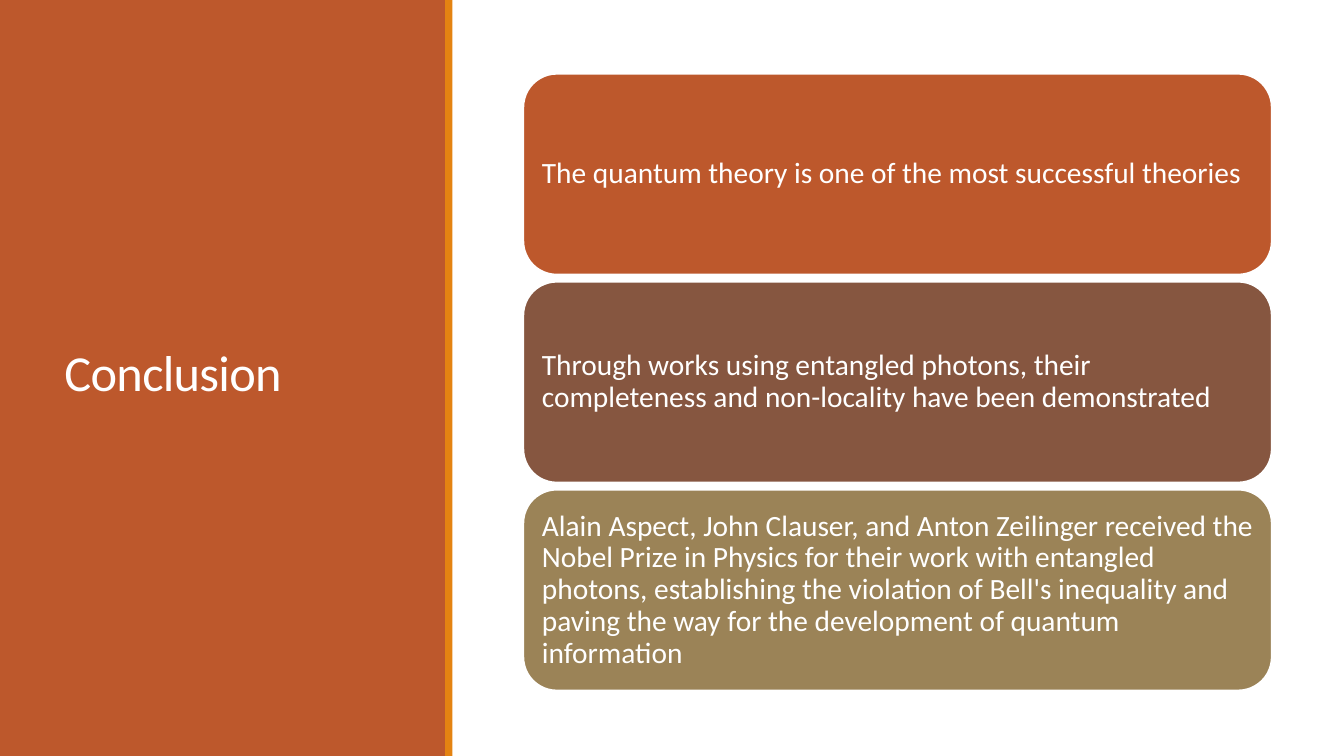
from pptx import Presentation
from pptx.dml.color import RGBColor
from pptx.enum.shapes import MSO_SHAPE as Shape
from pptx.enum.text import MSO_ANCHOR as Anchor, MSO_AUTO_SIZE as AutoSize, PP_ALIGN as Align
from pptx.util import Cm, Pt

COLORS = {
    "white": "FFFFFF",
    "rust": "BD582C",
    "orange": "E48312",
    "brown": "865640",
    "olive": "9B8357",
}
FONT = "Calibri"
SLIDE_W, SLIDE_H = 33.87, 19.05
PANEL_W, STRIPE_X, STRIPE_W = 11.25, 11.22, 0.18
CARD_X, CARD_Y, CARD_W, CARD_H, CARD_GAP = 13.19, 1.86, 18.86, 5.06, 0.18

CARDS = [
    ("rust", "The quantum theory is one of the most successful theories"),
    ("brown", "Through works using entangled photons, their completeness and "
              "non-locality have been demonstrated"),
    ("olive", "Alain Aspect, John Clauser, and Anton Zeilinger received the Nobel "
              "Prize in Physics for their work with entangled photons, establishing "
              "the violation of Bell's inequality and paving the way for the "
              "development of quantum information"),
]


def rgb(name):
    return RGBColor.from_string(COLORS[name])


def add_block(s, kind, x, y, w, h, color):
    sp = s.shapes.add_shape(kind, Cm(x), Cm(y), Cm(w), Cm(h))
    sp.shadow.inherit = False
    sp.fill.solid()
    sp.fill.fore_color.rgb = rgb(color)
    sp.line.fill.background()
    return sp


def set_text(sp, text, size, spacing):
    """Write one left-aligned white paragraph, centred vertically."""
    tf = sp.text_frame
    tf.text = text
    tf.word_wrap = True
    tf.auto_size = AutoSize.NONE
    tf.vertical_anchor = Anchor.MIDDLE
    p = tf.paragraphs[0]
    p.alignment = Align.LEFT
    p.line_spacing = spacing
    p.font.name = FONT
    p.font.size = Pt(size)
    p.font.color.rgb = rgb("white")
    return tf


def add_title(s, text):
    title = s.shapes.title
    title.left, title.top, title.width, title.height = Cm(1.37), Cm(1.45), Cm(8.56), Cm(16.03)
    tf = set_text(title, text, 36, 0.85)
    tf.paragraphs[0].runs[0].font._element.set("spc", "-50")
    s.shapes._spTree.append(title._element)  # bring in front of the panel


def add_card(s, y, color, text):
    sp = add_block(s, Shape.ROUNDED_RECTANGLE, CARD_X, y, CARD_W, CARD_H, color)
    sp.line.color.rgb = rgb("white")
    sp.line.width = Pt(1.25)
    tf = set_text(sp, text, 21, 0.9)
    tf.margin_left = tf.margin_right = tf.margin_top = tf.margin_bottom = Cm(0.22)


def main():
    prs = Presentation()
    prs.slide_width, prs.slide_height = Cm(SLIDE_W), Cm(SLIDE_H)
    s = prs.slides.add_slide(prs.slide_layouts[5])
    add_block(s, Shape.RECTANGLE, 0, 0, PANEL_W, SLIDE_H, "rust")
    add_title(s, "Conclusion")
    add_block(s, Shape.RECTANGLE, STRIPE_X, 0, STRIPE_W, SLIDE_H, "orange")
    for i, (color, text) in enumerate(CARDS):
        add_card(s, CARD_Y + i * (CARD_H + CARD_GAP), color, text)
    prs.save("out.pptx")


if __name__ == "__main__":
    main()
